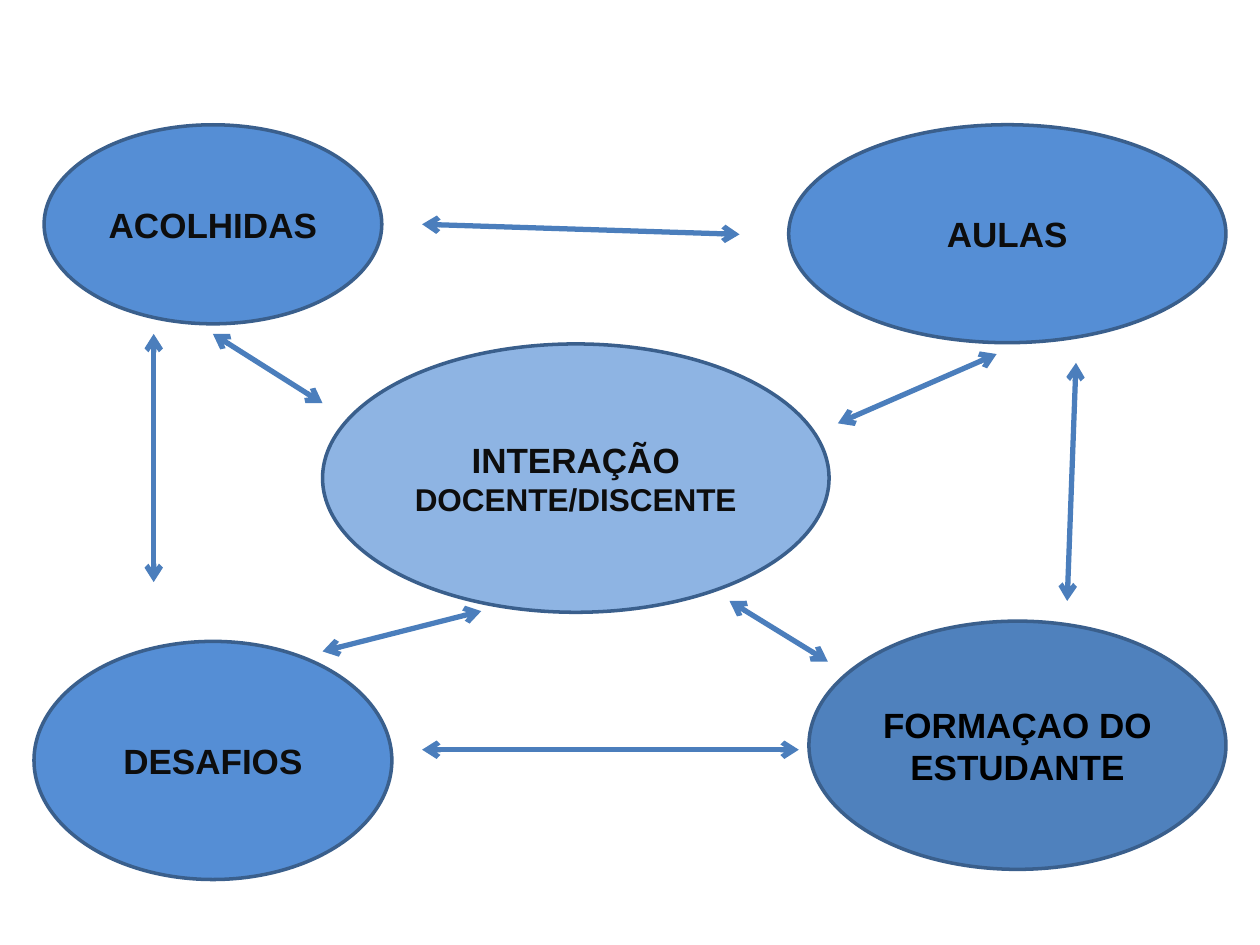
import pptx
import pptx.util
import pptx.dml.color
import pptx.enum.shapes
import pptx.enum.text
import pptx.oxml
import pptx.oxml.ns
from pptx.util import Inches

DARK = "0D0D0D"
BLUE = "558ED5"

# left, top, width, height, fill, text colour, lines of (text, size)
ELLIPSES = [
    (0.35, 0.99, 2.68, 1.58, BLUE, DARK, [("ACOLHIDAS", 20)]),
    (6.26, 0.99, 3.47, 1.73, BLUE, DARK, [("AULAS", 20)]),
    (0.27, 5.09, 2.84, 1.89, BLUE, DARK, [("DESAFIOS", 20)]),
    (6.42, 4.93, 3.31, 1.97, "4F81BD", "000000",
     [("FORMAÇAO DO ESTUDANTE", 20)]),
    (2.56, 2.73, 4.02, 2.13, "8EB4E3", DARK,
     [("INTERAÇÃO", 20), ("DOCENTE/DISCENTE", 18)]),
]

# x and y of each end
ARROWS = [
    (1.69, 2.65, 2.56, 3.2),
    (2.56, 5.17, 3.82, 4.85),
    (3.35, 5.95, 6.34, 5.95),
    (1.22, 2.65, 1.22, 4.62),
    (6.65, 3.36, 7.91, 2.81),
    (8.54, 2.88, 8.47, 4.77),
    (3.35, 1.78, 5.87, 1.86),
    (5.79, 4.77, 6.57, 5.25),
]


def rgb(color):
    return pptx.dml.color.RGBColor.from_string(color)


def set_line(s, color, width):
    s.line.color.rgb = rgb(color)
    s.line.width = pptx.util.Pt(width)


def add_ellipse(slide, left, top, width, height, fill, color, lines):
    s = slide.shapes.add_shape(
        pptx.enum.shapes.MSO_SHAPE.OVAL,
        Inches(left), Inches(top), Inches(width), Inches(height))
    s.shadow.inherit = False
    s.fill.solid()
    s.fill.fore_color.rgb = rgb(fill)
    set_line(s, "3A5F8C", 2)
    tf = s.text_frame
    tf.word_wrap = True
    tf.vertical_anchor = pptx.enum.text.MSO_ANCHOR.MIDDLE
    for i, (text, size) in enumerate(lines):
        p = tf.add_paragraph() if i else tf.paragraphs[0]
        p.alignment = pptx.enum.text.PP_ALIGN.CENTER
        r = p.add_run()
        r.text = text
        font = {"name": "Arial", "size": pptx.util.Pt(size), "bold": True}
        for name, value in font.items():
            setattr(r.font, name, value)
        r.font.color.rgb = rgb(color)


def add_double_arrow(slide, x1, y1, x2, y2):
    s = slide.shapes.add_connector(
        pptx.enum.shapes.MSO_CONNECTOR.STRAIGHT,
        Inches(x1), Inches(y1), Inches(x2), Inches(y2))
    set_line(s, "4B7EBC", 3)
    ln = s.line._get_or_add_ln()
    for end in ("a:headEnd", "a:tailEnd"):
        tip = pptx.oxml.xmlchemy.OxmlElement(end)
        tip.set("type", "arrow")
        ln.append(tip)
    s._element.spPr.append(pptx.oxml.xmlchemy.OxmlElement("a:effectLst"))


def main():
    prs = pptx.Presentation()
    prs.slide_width, prs.slide_height = Inches(10), Inches(7.5)
    slide = prs.slides.add_slide(prs.slide_layouts[6])
    for ellipse in ELLIPSES:
        add_ellipse(slide, *ellipse)
    for arrow in ARROWS:
        add_double_arrow(slide, *arrow)
    prs.save("out.pptx")


if __name__ == "__main__":
    main()
